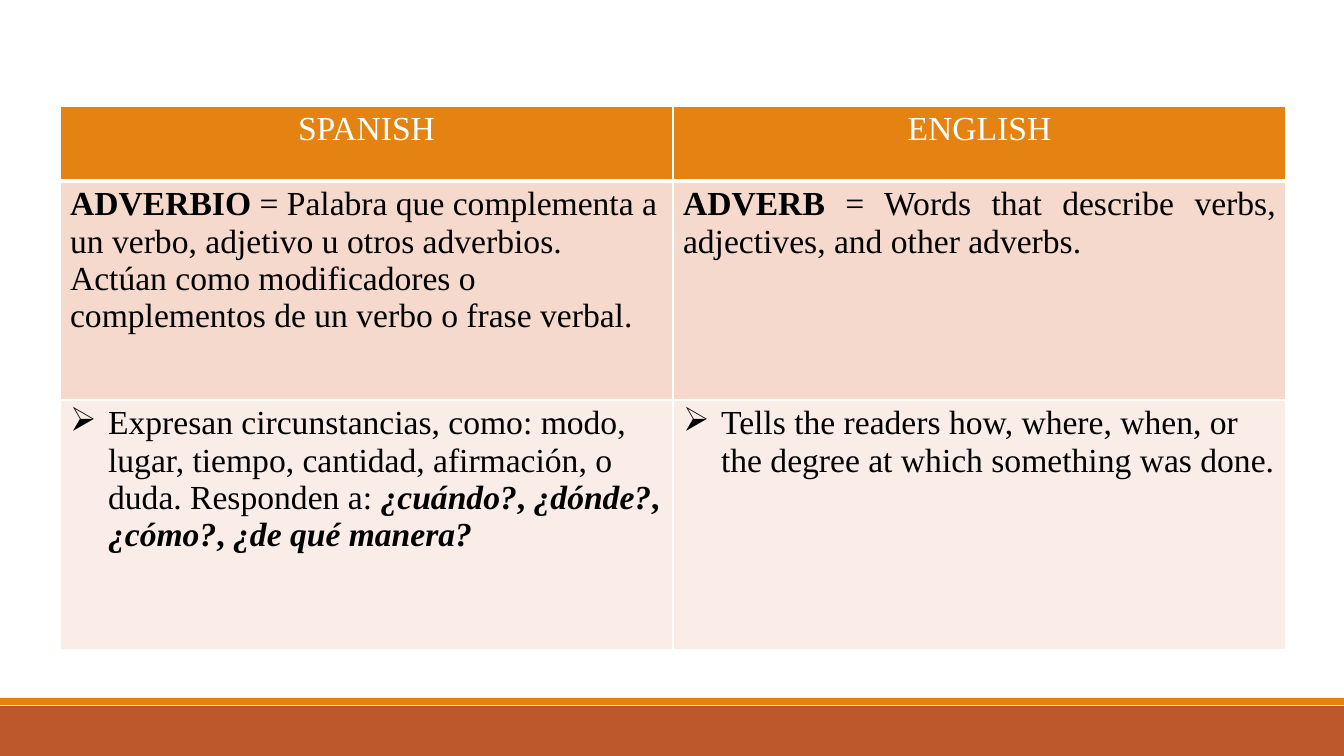
from lxml import etree
from pptx import Presentation
from pptx import util as u
from pptx.dml.color import RGBColor
from pptx.enum import shapes, text
from pptx.oxml.ns import qn

EMU_PER_INCH = 914400
PX_PER_INCH = 100.8

WHITE = RGBColor(0xFF, 0xFF, 0xFF)
BLACK = RGBColor(0x00, 0x00, 0x00)
ORANGE = RGBColor(0xE4, 0x83, 0x12)
RUST = RGBColor(0xBD, 0x58, 0x2C)
PEACH = RGBColor(0xF5, 0xD9, 0xCC)
BLUSH = RGBColor(0xFA, 0xED, 0xE7)

SLIDE_SIZE = (1344, 756)
COLUMN_WIDTHS = [613, 613]
ROW_HEIGHTS = [75, 219, 250]
ROW_FILLS = [ORANGE, PEACH, BLUSH]
BULLET_INDENT = 38

PLAIN = {}
BOLD = {"bold": True}
BOLD_ITALIC = {"bold": True, "italic": True}
BASE_FONT = {"name": "Times New Roman", "size": u.Pt(24), "bold": False, "italic": False}

LEFT = text.PP_ALIGN.LEFT
CENTER = text.PP_ALIGN.CENTER
JUSTIFY = text.PP_ALIGN.JUSTIFY

HEADINGS = [
    (CENTER, [("SPANISH", PLAIN)]),
    (CENTER, [("ENGLISH", PLAIN)]),
]
DEFINITIONS = [
    (LEFT, [
        ("ADVERBIO", BOLD),
        (" = Palabra que complementa a un verbo, adjetivo u otros adverbios. "
         "Actúan como modificadores o complementos de un verbo o frase verbal.", PLAIN),
    ]),
    (JUSTIFY, [
        ("ADVERB ", BOLD),
        ("= Words that describe verbs, adjectives, and other adverbs.", PLAIN),
    ]),
]
USES = [
    (LEFT, [
        ("Expresan circunstancias, como: modo, lugar, tiempo, cantidad, "
         "afirmación, o duda. Responden a: ", PLAIN),
        ("¿cuándo?", BOLD_ITALIC),
        (", ", BOLD),
        ("¿dónde?", BOLD_ITALIC),
        (", ", BOLD),
        ("¿cómo?", BOLD_ITALIC),
        (", ", BOLD),
        ("¿de qué manera?", BOLD_ITALIC),
    ]),
    (LEFT, [
        ("Tells the readers how, where, when, or the degree at which "
         "something was done.", PLAIN),
    ]),
]


def px(length):
    return u.Emu(round(length * EMU_PER_INCH / PX_PER_INCH))


def add_band(slide, top, height, color):
    band = slide.shapes.add_shape(
        shapes.MSO_SHAPE.RECTANGLE, 0, px(top), px(SLIDE_SIZE[0]), px(height))
    band.shadow.inherit = False
    band.fill.solid()
    band.fill.fore_color.rgb = color
    band.line.fill.background()


def set_borders(cell, widths):
    properties = cell._tc.get_or_add_tcPr()
    for side in ("L", "R", "T", "B"):
        border = etree.SubElement(
            properties, qn(f"a:ln{side}"), w=str(u.Pt(widths.get(side, 1))))
        solid = etree.SubElement(border, qn("a:solidFill"))
        etree.SubElement(solid, qn("a:srgbClr"), val=str(WHITE))


def add_bullet(paragraph):
    properties = paragraph._p.get_or_add_pPr()
    properties.set("marL", str(px(BULLET_INDENT)))
    properties.set("indent", str(-px(BULLET_INDENT)))
    etree.SubElement(properties, qn("a:buChar"), char="➢")


def write_runs(paragraph, runs, color):
    for wording, emphasis in runs:
        run = paragraph.add_run()
        run.text = wording
        for attribute, value in {**BASE_FONT, **emphasis}.items():
            setattr(run.font, attribute, value)
        run.font.color.rgb = color


def add_comparison(slide, left, top):
    comparison = slide.shapes.add_table(
        len(ROW_HEIGHTS), len(COLUMN_WIDTHS), px(left), px(top),
        px(sum(COLUMN_WIDTHS)), px(sum(ROW_HEIGHTS))).table
    for column, width in zip(comparison.columns, COLUMN_WIDTHS):
        column.width = px(width)
    for row, height in zip(comparison.rows, ROW_HEIGHTS):
        row.height = px(height)

    border_widths = [{"B": 3}, {"T": 3}, {}]
    for row_index, entries in enumerate([HEADINGS, DEFINITIONS, USES]):
        for column_index, (alignment, runs) in enumerate(entries):
            cell = comparison.cell(row_index, column_index)
            set_borders(cell, border_widths[row_index])
            cell.fill.solid()
            cell.fill.fore_color.rgb = ROW_FILLS[row_index]
            paragraph = cell.text_frame.paragraphs[0]
            paragraph.alignment = alignment
            if entries is USES:
                add_bullet(paragraph)
            write_runs(paragraph, runs, WHITE if entries is HEADINGS else BLACK)


def main():
    deck = Presentation()
    deck.slide_width, deck.slide_height = map(px, SLIDE_SIZE)
    slide = deck.slides.add_slide(deck.slide_layouts[6])
    add_band(slide, 706, 50, RUST)
    add_band(slide, 698, 7, ORANGE)
    add_comparison(slide, 60, 106)
    deck.save("out.pptx")


if __name__ == "__main__":
    main()
